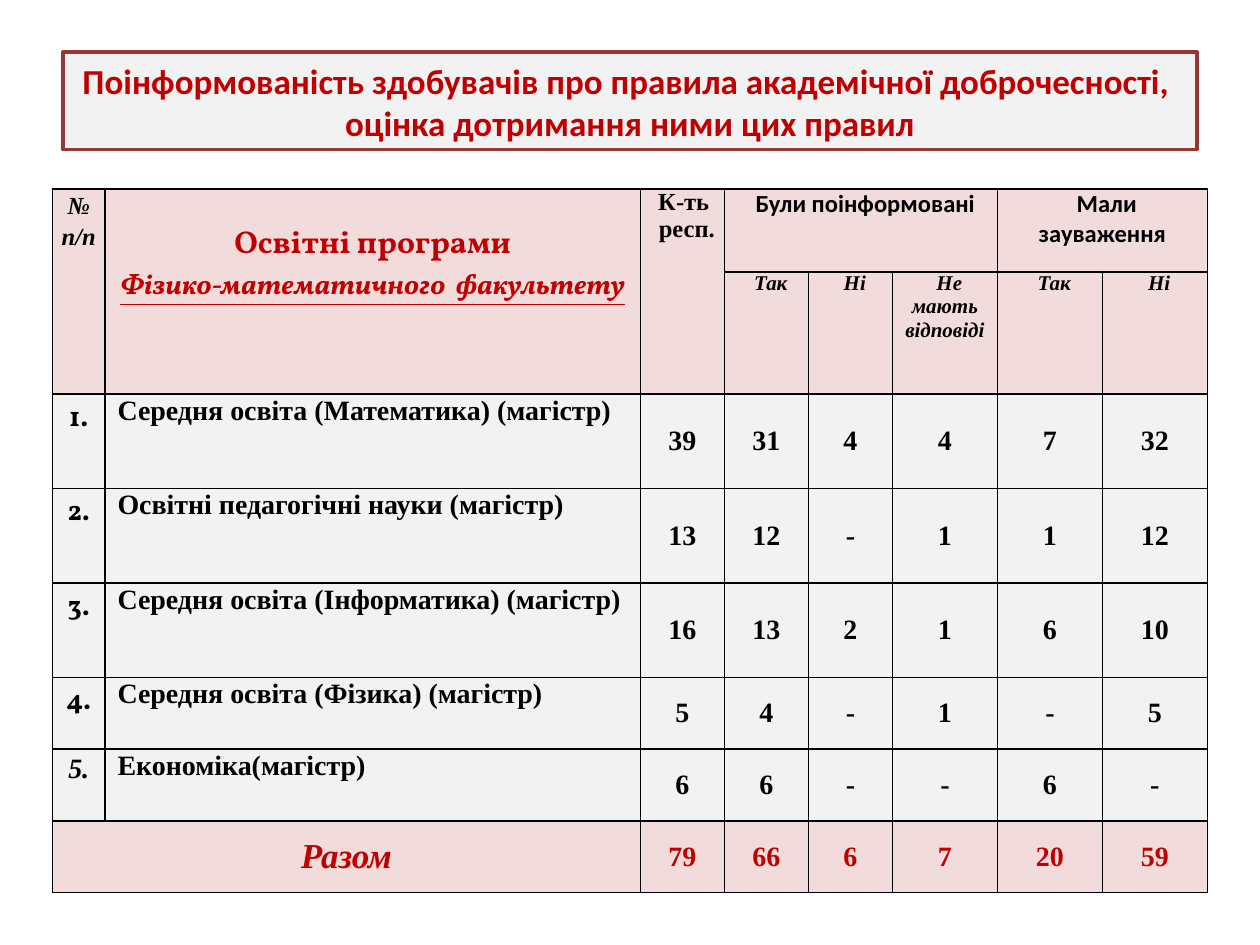
from lxml import etree
from pptx import Presentation
from pptx import util as u
from pptx.dml.color import RGBColor
from pptx.enum import shapes, text
from pptx.oxml.ns import qn

RED, BLACK, PINK, GREY = "C00000", "000000", "F2DCDB", "F2F2F2"
SERIF, DISPLAY, SANS = "Times New Roman", "Vollkorn", "Calibri"
CENTER, LEFT = text.PP_ALIGN.CENTER, text.PP_ALIGN.LEFT

COLUMN_WIDTHS = [30, 306, 48, 48, 48, 60, 60, 60]
ROW_HEIGHTS = [47.4, 69.7, 54, 54, 54, 41, 41, 41]
NARROW, NUMERIC, WIDE = (3, 0), (5, 0), (7.2, 3.6)  # side and top insets

PROGRAMS = [
    ("Середня освіта (Математика) (магістр)", "39", "31", "4", "4", "7", "32"),
    ("Освітні педагогічні науки (магістр)", "13", "12", "-", "1", "1", "12"),
    ("Середня освіта (Інформатика) (магістр)", "16", "13", "2", "1", "6", "10"),
    ("Середня освіта (Фізика) (магістр)", "5", "4", "-", "1", "-", "5"),
    ("Економіка(магістр)", "6", "6", "-", "-", "6", "-"),
]
TOTALS = ("79", "66", "6", "7", "20", "59")


def color(value):
    return RGBColor.from_string(value)


def write(paragraph, content, size=16, font=SERIF, fill=BLACK, italic=None,
          underline=None, align=CENTER, spacing=None, indent=0):
    paragraph.alignment = align
    if spacing:
        paragraph.line_spacing = spacing
    if indent:
        properties = paragraph._p.get_or_add_pPr()
        properties.set("marL", "0")
        properties.set("indent", str(u.Pt(indent)))
    for number, line in enumerate(content.split("\n")):
        if number:
            paragraph.add_line_break()
        run = paragraph.add_run()
        run.text = line
        run.font.size = u.Pt(size)
        run.font.name = font
        run.font.bold = True
        run.font.italic = italic
        run.font.underline = underline
        run.font.color.rgb = color(fill)


def style_cell(cell, fill):
    properties = cell._tc.get_or_add_tcPr()
    for side in ("a:lnL", "a:lnR", "a:lnT", "a:lnB"):
        line = etree.SubElement(properties, qn(side), w=str(u.Pt(1)))
        solid = etree.SubElement(line, qn("a:solidFill"))
        etree.SubElement(solid, qn("a:srgbClr"), val=BLACK)
    cell.fill.solid()
    cell.fill.fore_color.rgb = color(fill)


def fill_cell(cell, *lines, insets=NARROW, middle=False, **formatting):
    side, top = insets
    cell.margin_left = cell.margin_right = u.Pt(side)
    cell.margin_top = cell.margin_bottom = u.Pt(top)
    cell.vertical_anchor = text.MSO_ANCHOR.MIDDLE if middle else text.MSO_ANCHOR.TOP
    frame = cell.text_frame
    for number, line in enumerate(lines):
        paragraph = frame.add_paragraph() if number else frame.paragraphs[0]
        write(paragraph, line, **formatting)


def fill_numbers(table, row, values, fill=BLACK):
    for column, value in enumerate(values, start=2):
        fill_cell(table.cell(row, column), value, fill=fill, middle=True,
                  insets=WIDE if column == 2 else NUMERIC)


def add_title(slide):
    shape = slide.shapes.add_shape(shapes.MSO_SHAPE.RECTANGLE, u.Pt(36), u.Pt(30),
                                   u.Pt(648), u.Pt(55.5))
    shape.shadow.inherit = False
    shape.fill.solid()
    shape.fill.fore_color.rgb = color(GREY)
    shape.line.color.rgb = color("953735")
    shape.line.width = u.Pt(2.25)
    frame = shape.text_frame
    frame.word_wrap = True
    frame.vertical_anchor = text.MSO_ANCHOR.MIDDLE
    write(frame.paragraphs[0],
          "Поінформованість здобувачів про правила академічної доброчесності, \n"
          "оцінка дотримання ними цих правил", size=20, font=SANS, fill=RED)


def add_grid(slide):
    frame = slide.shapes.add_table(
        len(ROW_HEIGHTS), len(COLUMN_WIDTHS), u.Pt(30), u.Pt(108),
        u.Pt(sum(COLUMN_WIDTHS)), u.Pt(sum(ROW_HEIGHTS)))
    table = frame.table
    table.first_row = table.horz_banding = False
    for column, width in zip(table.columns, COLUMN_WIDTHS):
        column.width = u.Pt(width)
    last = len(ROW_HEIGHTS) - 1
    for index, height in enumerate(ROW_HEIGHTS):
        table.rows[index].height = u.Pt(height)
        for cell in table.rows[index].cells:
            style_cell(cell, PINK if index in (0, 1, last) else GREY)
    merges = [(0, 0, 1, 0), (0, 1, 1, 1), (0, 2, 1, 2), (0, 3, 0, 5),
              (0, 6, 0, 7), (last, 0, last, 1)]
    for top, left, bottom, right in merges:
        table.cell(top, left).merge(table.cell(bottom, right))
    return table


def fill_header(table):
    fill_cell(table.cell(0, 0), "№", "п/п", size=14, italic=True, spacing=1.15)

    # Programme heading: two differently formatted lines
    heading = table.cell(0, 1)
    fill_cell(heading, "Освітні програми", size=18, font=DISPLAY, fill=RED)
    heading.margin_top = u.Pt(20)
    write(heading.text_frame.add_paragraph(), "Фізико-математичного  факультету",
          font=DISPLAY, fill=RED, italic=True, underline=True)

    # Column groups and their answers
    fill_cell(table.cell(0, 2), "К-ть ", "респ.", size=14, indent=5)
    for column, label in ((3, "Були поінформовані"), (6, "Мали зауваження")):
        fill_cell(table.cell(0, column), label, size=14, font=SANS, indent=5)
    answers = ("Так", "Ні", "Не мають відповіді", "Так", "Ні")
    for column, label in enumerate(answers, start=3):
        fill_cell(table.cell(1, column), label, size=12, italic=True, indent=5)


def fill_body(table):
    for number, (program, *values) in enumerate(PROGRAMS, start=1):
        row = number + 1
        final = number == len(PROGRAMS)
        fill_cell(table.cell(row, 0), f"{number}.", spacing=1.15,
                  font=SERIF if final else DISPLAY, italic=final)
        fill_cell(table.cell(row, 1), program, insets=WIDE, align=LEFT, spacing=0.8)
        fill_numbers(table, row, values)


def fill_totals(table):
    row = len(ROW_HEIGHTS) - 1
    fill_cell(table.cell(row, 0), "Разом", size=20, fill=RED, italic=True, middle=True)
    fill_numbers(table, row, TOTALS, fill=RED)


def main():
    presentation = Presentation()
    presentation.slide_width, presentation.slide_height = u.Pt(720), u.Pt(540)
    slide = presentation.slides.add_slide(presentation.slide_layouts[6])

    # Results table
    table = add_grid(slide)
    fill_header(table)
    fill_body(table)
    fill_totals(table)

    # Title banner
    add_title(slide)
    presentation.save("out.pptx")


if __name__ == "__main__":
    main()
